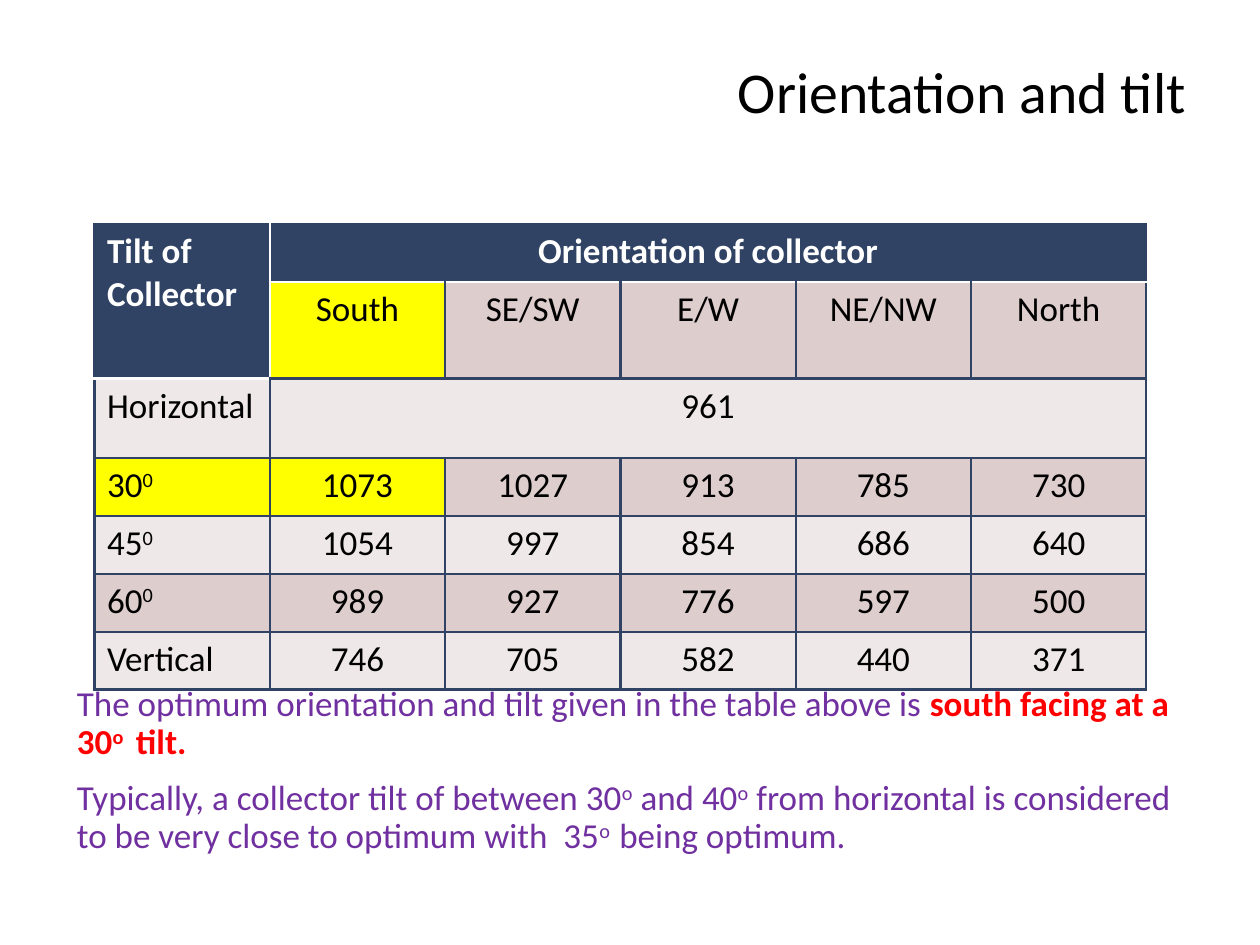
from dataclasses import dataclass

from lxml import etree
from pptx import Presentation
from pptx.dml.color import RGBColor
from pptx.enum import text
from pptx.oxml import ns
from pptx.util import Pt


@dataclass(frozen=True)
class Theme:
    font: str = "Calibri"
    title_size: float = 33
    body_size: float = 20
    black: str = "000000"
    white: str = "FFFFFF"
    navy: str = "304364"
    yellow: str = "FFFF00"
    band_dark: str = "DECDCD"
    band_light: str = "EFE8E8"
    purple: str = "7030A0"
    red: str = "FF0000"
    border: float = 1.5


@dataclass(frozen=True)
class Run:
    text: str
    color: str = Theme.black
    size: float = Theme.body_size
    bold: bool = False
    raised: bool = False


@dataclass(frozen=True)
class Box:
    left: float
    top: float
    width: float
    height: float


T = Theme()
LEFT, CENTER, RIGHT = (text.PP_ALIGN.LEFT, text.PP_ALIGN.CENTER, text.PP_ALIGN.RIGHT)


def fill_paragraph(p, runs: list[Run], **fmt) -> None:
    for name, value in fmt.items():
        setattr(p, name, value)
    for item in runs:
        r = p.add_run()
        r.text = item.text
        font = {"name": T.font, "size": Pt(item.size), "bold": item.bold}
        for name, value in font.items():
            setattr(r.font, name, value)
        r.font.color.rgb = RGBColor.from_string(item.color)
        if item.raised:
            r.font._element.set("baseline", "30000")


def add_text(s, box: Box, paragraphs: list[list[Run]], anchor, align, gap: float = 0) -> None:
    sp = s.shapes.add_textbox(Pt(box.left), Pt(box.top), Pt(box.width), Pt(box.height))
    tf = sp.text_frame
    for name, value in {"word_wrap": True, "vertical_anchor": anchor}.items():
        setattr(tf, name, value)
    for i, runs in enumerate(paragraphs):
        p = tf.add_paragraph() if i else tf.paragraphs[0]
        fill_paragraph(p, runs, alignment=align, line_spacing=0.9, space_before=Pt(gap if i else 0))


# Table rules
def cell_fill(row: int, col: int) -> str:
    if row == 0 or (row == 1 and col == 0):
        return T.navy
    if (row, col) in {(1, 1), (3, 0), (3, 1)}:
        return T.yellow
    return T.band_dark if row % 2 else T.band_light


def horizontal_edge(row: int, col: int) -> str:
    return T.white if row == 1 or (row == 2 and col == 0) else T.navy


def vertical_edge(row: int, col: int) -> str:
    return T.white if col == 1 and row < 2 else T.navy


def set_borders(cell, row: int, col: int) -> None:
    bottom, right = row + cell.span_height, col + cell.span_width
    edges = {
        "lnL": vertical_edge(row, col),
        "lnR": vertical_edge(row, right),
        "lnT": horizontal_edge(row, col),
        "lnB": horizontal_edge(bottom, col),
    }
    tc_pr = cell._tc.get_or_add_tcPr()
    for i, (tag, color) in enumerate(edges.items()):
        ln = etree.Element(ns.qn(f"a:{tag}"), w=str(Pt(T.border)))
        fill = etree.SubElement(ln, ns.qn("a:solidFill"))
        etree.SubElement(fill, ns.qn("a:srgbClr"), val=color)
        tc_pr.insert(i, ln)


def add_tilt_table(s, box: Box, rows: list[list[str]], heights: list[float]) -> None:
    n_cols = len(rows[1])
    sp = s.shapes.add_table(len(rows), n_cols, Pt(box.left), Pt(box.top), Pt(box.width), Pt(box.height))
    table = sp.table
    for column in table.columns:
        column.width = Pt(box.width / n_cols)
    for row, height in zip(table.rows, heights):
        row.height = Pt(height)
    # Merged headings and the full-width horizontal value
    table.cell(0, 0).merge(table.cell(1, 0))
    for row in (0, 2):
        table.cell(row, 1).merge(table.cell(row, n_cols - 1))
    for row, labels in enumerate(rows):
        for col, label in enumerate(labels):
            cell = table.cell(row, col)
            if cell.is_spanned:
                continue
            cell.fill.solid()
            cell.fill.fore_color.rgb = RGBColor.from_string(cell_fill(row, col))
            set_borders(cell, row, col)
            header = row == 0
            value, degree, power = label.partition("^")
            color = T.white if header else T.black
            runs = [Run(value, color, bold=header)]
            if degree:
                runs.append(Run(power, color, raised=True))
            fill_paragraph(cell.text_frame.paragraphs[0], runs, alignment=CENTER if col else LEFT)


# Content; "^" marks the raised part of a label
ROWS = [
    ["Tilt of Collector", "Orientation of collector"],
    ["", "South", "SE/SW", "E/W", "NE/NW", "North"],
    ["Horizontal", "961"],
    ["30^0", "1073", "1027", "913", "785", "730"],
    ["45^0", "1054", "997", "854", "686", "640"],
    ["60^0", "989", "927", "776", "597", "500"],
    ["Vertical", "746", "705", "582", "440", "371"],
]
HEIGHTS = [45.4 if row == 2 else 33.1 for row in range(len(ROWS))]
NOTES = [
    [
        Run("The optimum orientation and tilt given in the table above is ", T.purple),
        Run("south facing at a 30", T.red, bold=True),
        Run("o ", T.red, bold=True, raised=True),
        Run(" tilt.", T.red, bold=True),
    ],
    [
        Run("Typically, a collector tilt of between 30", T.purple),
        Run("o", T.purple, raised=True),
        Run(" and 40", T.purple),
        Run("o", T.purple, raised=True),
        Run(" from horizontal is considered to be very close to optimum with  35", T.purple),
        Run("o  ", T.purple, raised=True),
        Run("being optimum.", T.purple),
    ],
]


def main() -> None:
    prs = Presentation()
    prs.slide_width, prs.slide_height = Pt(720), Pt(540)
    s = prs.slides.add_slide(prs.slide_layouts[6])
    # Title
    title = [Run("Orientation and tilt", size=T.title_size)]
    add_text(s, Box(178.6, 15.1, 506.2, 77.8), [title], text.MSO_ANCHOR.MIDDLE, RIGHT)
    # Conclusions below the table
    add_text(s, Box(36.9, 388.8, 648, 136.1), NOTES, text.MSO_ANCHOR.TOP, LEFT, gap=10.5)
    # Yield by tilt and orientation
    add_tilt_table(s, Box(54, 128, 601.2, sum(HEIGHTS)), ROWS, HEIGHTS)
    prs.save("out.pptx")


if __name__ == "__main__":
    main()
